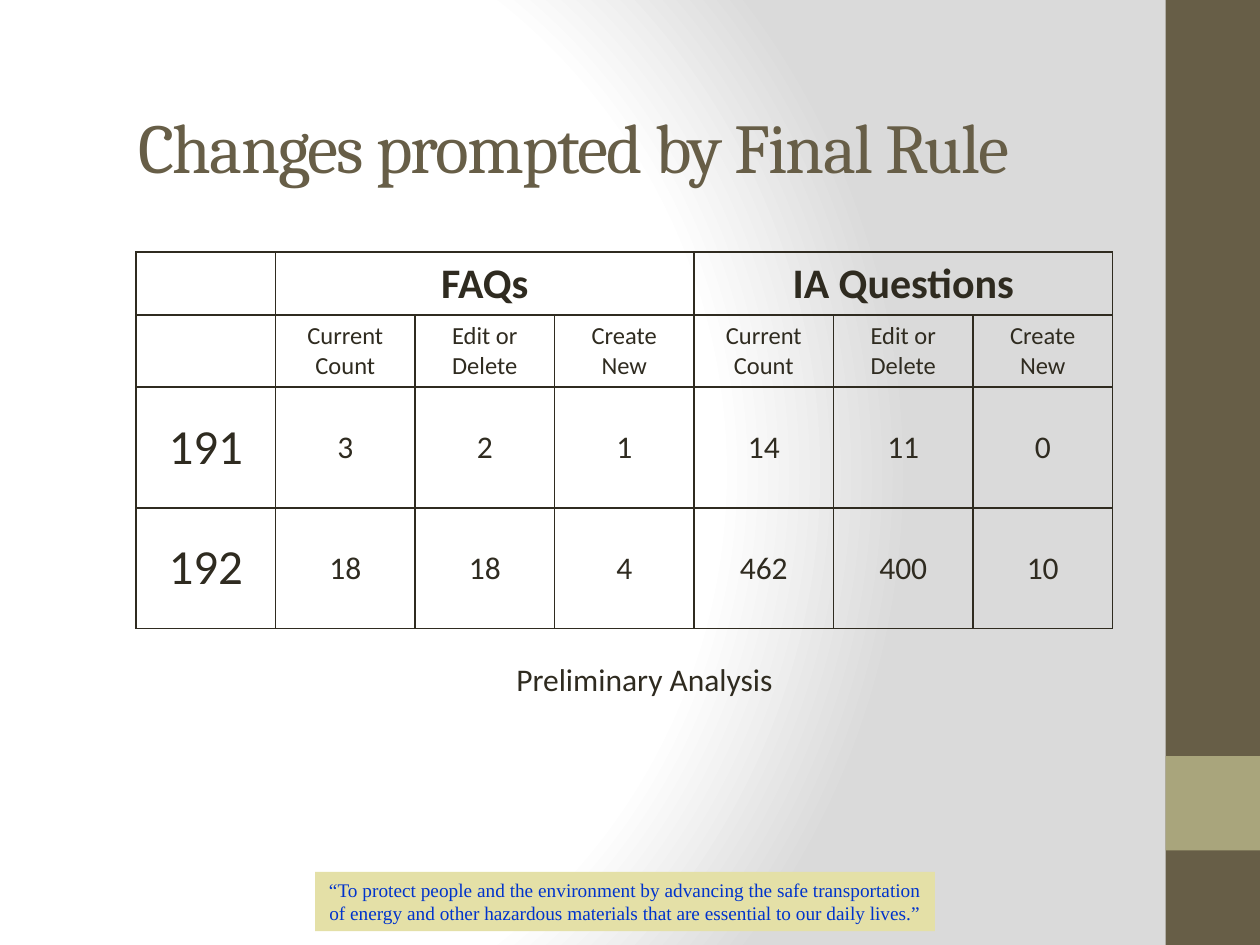
"""Build the slide on FAQ and IA question changes prompted by the final rule."""
from pptx import Presentation
from pptx.dml.color import RGBColor
from pptx.enum import shapes, text
from pptx.oxml import parse_xml
from pptx.oxml.ns import nsdecls
from pptx.util import Inches, Pt

COLORS = {"brown": "675E47", "olive": "A9A57C", "sand": "E4E0A7",
          "ink": "2F2B20", "blue": "0033CC", "white": "FFFFFF", "gray": "DADADA"}


def write(tf, words, size, font, color, align=text.PP_ALIGN.CENTER, bold=False):
    tf.text = words
    p = tf.paragraphs[0]
    p.alignment = align
    r = p.runs[0]
    r.font.size, r.font.name, r.font.bold = Pt(size), font, bold
    r.font.color.rgb = RGBColor.from_string(COLORS[color])
    return r


def add_block(left, top, width, height, color):
    sp = s.shapes.add_shape(shapes.MSO_SHAPE.RECTANGLE, Inches(left), Inches(top),
                            Inches(width), Inches(height))
    sp.shadow.inherit = False
    sp.fill.solid()
    sp.fill.fore_color.rgb = RGBColor.from_string(COLORS[color])
    sp.line.fill.background()
    return sp


prs = Presentation()
prs.slide_width, prs.slide_height = Inches(10), Inches(7.5)
s = prs.slides.add_slide(prs.slide_layouts[6])

stops = "".join(f'<a:gs pos="{pos}000"><a:srgbClr val="{COLORS[name]}"/></a:gs>'
                for pos, name in ((0, "white"), (75, "white"), (100, "gray")))
s.element.cSld.insert(0, parse_xml(
    f'<p:bg {nsdecls("p", "a")}><p:bgPr><a:gradFill rotWithShape="1"><a:gsLst>{stops}</a:gsLst>'
    '<a:path path="circle"><a:fillToRect l="20000" t="50000" r="100000" b="50000"/></a:path>'
    '</a:gradFill><a:effectLst/></p:bgPr></p:bg>'))

add_block(9.25, 0, 0.75, 7.5, "brown")
add_block(9.25, 6, 0.75, 0.75, "olive")
motto = add_block(2.5, 6.92, 4.92, 0.47, "sand")
motto.text_frame.word_wrap = True
write(motto.text_frame, "“To protect people and the environment by advancing the safe transportation "
      "of energy and other hazardous materials that are essential to our daily lives.”",
      11, "Times New Roman", "blue")

title = s.shapes.add_textbox(Inches(1), Inches(0.92), Inches(7.67), Inches(0.47))
title.text_frame.word_wrap = True
title.text_frame.vertical_anchor = text.MSO_ANCHOR.MIDDLE
r = write(title.text_frame, "Changes prompted by Final Rule", 40, "Cambria", "brown",
          text.PP_ALIGN.LEFT)
r.font._element.set("spc", "-100")

subheads = ["Current Count", "Edit or Delete", "Create New"]
rows = [["", "FAQs", "", "", "IA Questions", "", ""],
        [""] + subheads * 2,
        ["191", "3", "2", "1", "14", "11", "0"],
        ["192", "18", "18", "4", "462", "400", "10"]]
heights = [0.5, 0.57, 0.96, 0.96]
sizes = [24, 14, 18, 18]

frame = s.shapes.add_table(4, 7, Inches(1.08), Inches(2), Inches(7.75), Inches(sum(heights)))
table = frame.table
table.first_row = table.horz_banding = False
for col in table.columns:
    col.width = Inches(7.75 / 7)
for i, row in enumerate(rows):
    table.rows[i].height = Inches(heights[i])
    for j, words in enumerate(row):
        cell = table.cell(i, j)
        if words:
            write(cell.text_frame, words, 28 if i > 1 and j == 0 else sizes[i],
                  "Calibri", "ink", bold=i == 0)
        if i > 0:
            cell.vertical_anchor = text.MSO_ANCHOR.MIDDLE
        tcPr = cell._tc.get_or_add_tcPr()
        for side in ("lnL", "lnR", "lnT", "lnB"):
            tcPr.append(parse_xml(
                f'<a:{side} {nsdecls("a")} w="12700"><a:solidFill>'
                f'<a:srgbClr val="{COLORS["ink"]}"/></a:solidFill></a:{side}>'))
        cell.fill.background()
for first in (1, 4):
    table.cell(0, first).merge(table.cell(0, first + 2))

note = s.shapes.add_textbox(Inches(4), Inches(5.19), Inches(2.26), Inches(0.4))
note.text_frame.word_wrap = False
write(note.text_frame, "Preliminary Analysis", 18, "Calibri", "ink", text.PP_ALIGN.LEFT)

prs.save("out.pptx")
